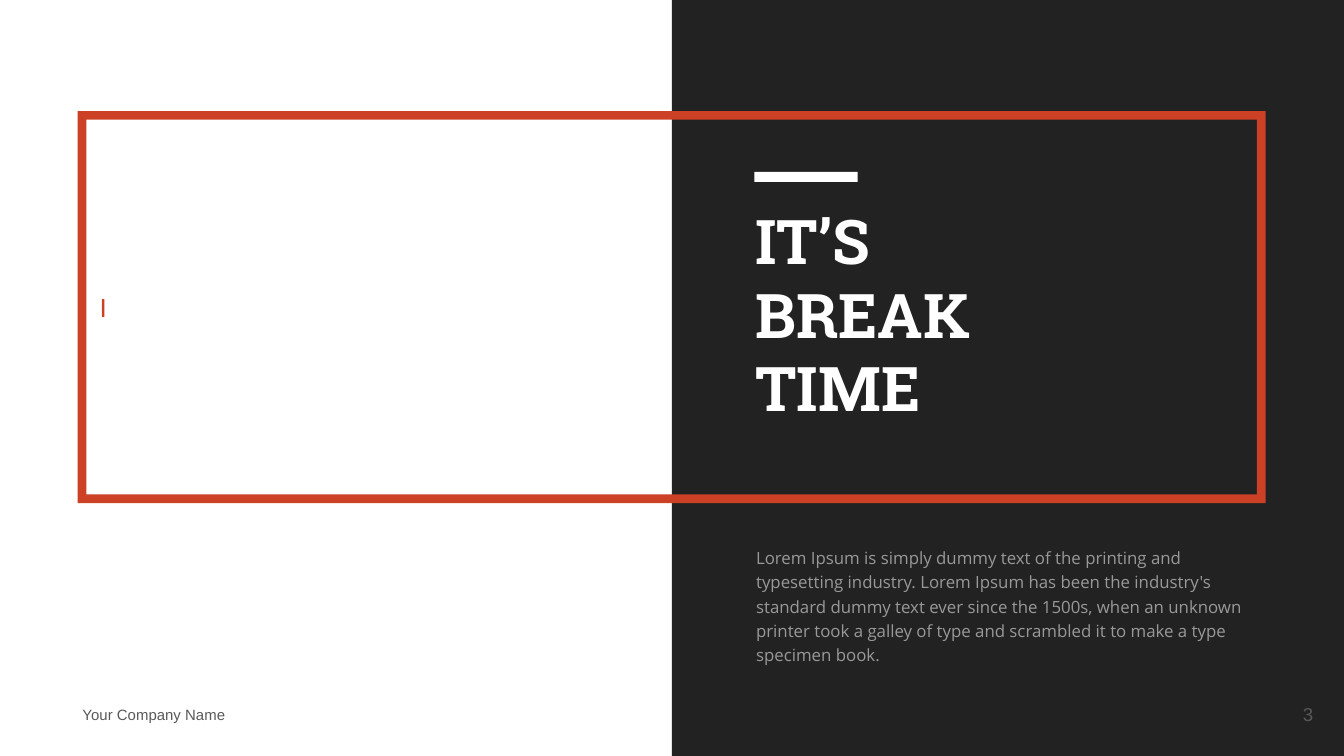
from dataclasses import dataclass

from pptx import Presentation
from pptx.dml.color import RGBColor
from pptx.enum.shapes import MSO_SHAPE as Preset
from pptx.enum.text import MSO_ANCHOR as Anchor, PP_ALIGN as Align
from pptx.util import Cm, Pt

WIDTH, HEIGHT = 25.4, 14.29
HALF = WIDTH / 2
INSET = 0.25
WHITE, DARK, ACCENT = "FFFFFF", "222222", "CC4125"
GREY, LIGHT_GREY = "595959", "999999"


@dataclass(frozen=True)
class Area:
    left: float
    top: float
    width: float
    height: float

    def lengths(self) -> tuple:
        return tuple(Cm(v) for v in (self.left, self.top, self.width, self.height))


@dataclass(frozen=True)
class Style:
    size: float
    color: str
    font: str = "Arial"
    bold: bool = False
    align: Align = Align.LEFT
    anchor: Anchor = Anchor.MIDDLE
    spacing: float = 1.0


@dataclass(frozen=True)
class Label:
    text: str
    area: Area
    style: Style


def rgb(color: str) -> RGBColor:
    return RGBColor.from_string(color)


def write(shape, text: str, style: Style) -> None:
    frame = shape.text_frame
    frame.text = text
    frame.word_wrap = True
    frame.vertical_anchor = style.anchor
    frame.margin_left = frame.margin_right = Cm(INSET)
    frame.margin_top = frame.margin_bottom = Cm(INSET)
    for para in frame.paragraphs:
        para.alignment = style.align
        para.line_spacing = style.spacing
        for span in para.runs:
            span.font.name = style.font
            span.font.size = Pt(style.size)
            span.font.bold = style.bold
            span.font.color.rgb = rgb(style.color)


def add_block(page, preset: Preset, area: Area, color: str):
    shape = page.shapes.add_shape(preset, *area.lengths())
    shape.shadow.inherit = False
    shape.fill.solid()
    shape.fill.fore_color.rgb = rgb(color)
    shape.line.fill.background()
    return shape


def add_label(page, label: Label) -> None:
    box = page.shapes.add_textbox(*label.area.lengths())
    write(box, label.text, label.style)


LABELS = [
    Label("Your Company Name", Area(1.31, 13.17, 4.24, 0.66), Style(8, GREY)),
    Label("3", Area(23.55, 12.96, 1.52, 1.09), Style(10, GREY, align=Align.RIGHT)),
    Label(
        "IT’S\nBREAK\nTIME",
        Area(14.03, 3.58, 9.8, 4.6),
        Style(33, WHITE, "Roboto Slab", bold=True, anchor=Anchor.TOP),
    ),
    Label(
        "Lorem Ipsum is simply dummy text of the printing and typesetting "
        "industry. Lorem Ipsum has been the industry's standard dummy text "
        "ever since the 1500s, when an unknown printer took a galley of type "
        "and scrambled it to make a type specimen book.",
        Area(14.04, 10.03, 9.8, 2.72),
        Style(9, LIGHT_GREY, "Open Sans", anchor=Anchor.TOP, spacing=1.2),
    ),
]


def main() -> None:
    deck = Presentation()
    deck.slide_width, deck.slide_height = Cm(WIDTH), Cm(HEIGHT)
    page = deck.slides.add_slide(deck.slide_layouts[6])
    page.background.fill.solid()
    page.background.fill.fore_color.rgb = rgb(WHITE)

    add_block(page, Preset.RECTANGLE, Area(HALF, 0, HALF, HEIGHT), DARK)
    border = add_block(page, Preset.FRAME, Area(1.47, 2.1, 22.45, 7.41), ACCENT)
    border.adjustments[0] = 0.022
    write(border, "I", Style(14, ACCENT))
    add_block(page, Preset.RECTANGLE, Area(14.26, 3.25, 1.95, 0.19), WHITE)
    for label in LABELS:
        add_label(page, label)

    deck.save("out.pptx")


if __name__ == "__main__":
    main()
